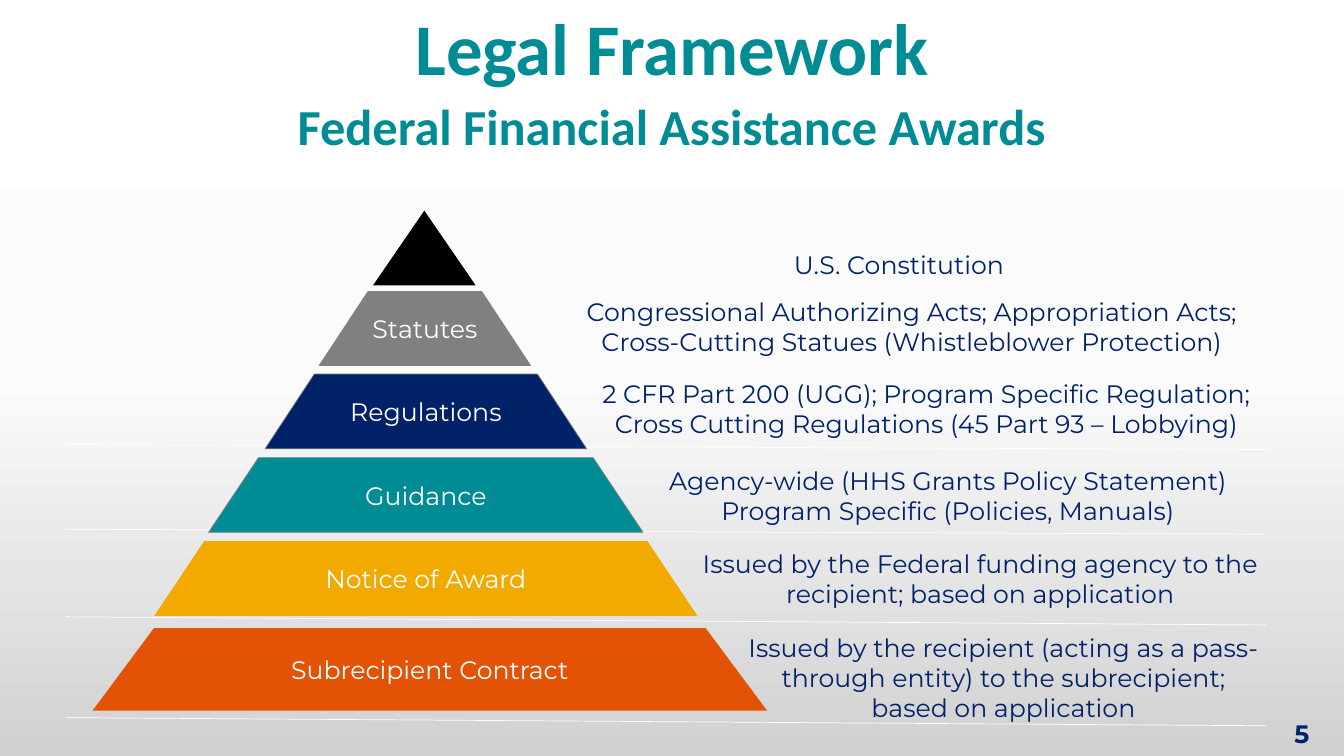
from copy import deepcopy

from lxml import etree
from pptx import Presentation
from pptx.dml.color import RGBColor
from pptx.enum.shapes import MSO_CONNECTOR, MSO_SHAPE
from pptx.enum.text import MSO_ANCHOR, MSO_AUTO_SIZE, PP_ALIGN
from pptx.oxml.ns import qn
from pptx.util import Pt

CENTER = PP_ALIGN.CENTER
TOP, MIDDLE = MSO_ANCHOR.TOP, MSO_ANCHOR.MIDDLE
FIXED, GROW = MSO_AUTO_SIZE.NONE, MSO_AUTO_SIZE.SHAPE_TO_FIT_TEXT
STRAIGHT, TRIANGLE = MSO_CONNECTOR.STRAIGHT, MSO_SHAPE.ISOSCELES_TRIANGLE

WHITE = RGBColor(0xFF, 0xFF, 0xFF)
OFF_WHITE = RGBColor(0xFB, 0xFB, 0xFB)
SILVER = RGBColor(0xD1, 0xD1, 0xD1)
GRAY = RGBColor(0x80, 0x80, 0x80)
BLACK = RGBColor(0, 0, 0)
NAVY = RGBColor(0x01, 0x21, 0x69)
TEAL = RGBColor(0x00, 0x8C, 0x95)
GOLD = RGBColor(0xF2, 0xA9, 0x00)
ORANGE = RGBColor(0xE3, 0x52, 0x05)

# label, fill, outline, centre, top, height, base width, inset of the top edge
TIERS = [
    ("Statutes", GRAY, None, 303.5, 208, 53.4, 152, 35.2),
    ("Regulations", NAVY, GRAY, 304.2, 267.2, 53.4, 229.8, 35.2),
    ("Guidance", TEAL, GRAY, 304.2, 326.9, 53.4, 310.4, 35.7),
    ("Notice of Award", GOLD, None, 304.2, 386.6, 53.4, 388, 35.7),
    ("Subrecipient Contract", ORANGE, None, 307, 448.6, 59, 481.8, 43.9),
]
# left, top, width, height, lines
SOURCES = [
    (406, 174.2, 472.3, 29, ["U.S. Constitution"]),
    (388.8, 208, 525, 51, ["Congressional Authorizing Acts; Appropriation Acts;",
                           "Cross-Cutting Statues (Whistleblower Protection)"]),
    (405.4, 266.4, 512.6, 51, ["2 CFR Part 200 (UGG); Program Specific Regulation;",
                               "Cross Cutting Regulations (45 Part 93 – Lobbying)"]),
    (440.6, 329, 473, 51, ["Agency-wide (HHS Grants Policy Statement)",
                           "Program Specific (Policies, Manuals)"]),
    (486.7, 388, 427, 51, ["Issued by the Federal funding agency to the recipient; "
                           "based on application"]),
    (503.3, 447.8, 427, 72.7, ["Issued by the recipient (acting as a pass-through entity) "
                               "to the subrecipient;", "based on application"]),
]
# height at the left end and at the right end
DIVIDERS = [(211, 211), (261.4, 262.1), (317.5, 321.1),
            (378, 381.6), (440.6, 446.4), (512.6, 518.4)]


def assign(target, values):
    for name, value in values.items():
        setattr(target, name, value)


class FrameworkSlide:
    HEADING = {"name": "Calibri", "bold": True}
    BODY = {"name": "Montserrat", "size": Pt(18), "bold": False}

    def __init__(self, slide):
        self.slide = slide

    def background(self, colors):
        """Vertical gradient with evenly spaced stops."""
        fill = self.slide.background.fill
        fill.gradient()
        fill.gradient_angle = 270
        stop_list = self.slide.element.find(".//" + qn("a:gsLst"))
        stop_list.insert(1, deepcopy(stop_list[0]))
        for i, (stop, color) in enumerate(zip(fill.gradient_stops, colors)):
            stop.position = i / (len(colors) - 1)
            stop.color.rgb = color

    def set_text(self, frame, lines, font, color, frame_format, paragraph_format=None):
        assign(frame, {"word_wrap": True, **frame_format})
        for i, line in enumerate(lines):
            paragraph = frame.paragraphs[0] if i == 0 else frame.add_paragraph()
            assign(paragraph, {"alignment": CENTER, **(paragraph_format or {})})
            run = paragraph.add_run()
            run.text = line
            assign(run.font, font)
            run.font.color.rgb = color

    def heading(self, index, text, box, size, anchor, space_before):
        holder = self.slide.placeholders[index]
        assign(holder, dict(zip(("left", "top", "width", "height"), map(Pt, box))))
        self.set_text(holder.text_frame, [text], {**self.HEADING, "size": Pt(size)}, TEAL,
                      {"auto_size": FIXED, "vertical_anchor": anchor},
                      {"line_spacing": 0.9, "space_before": Pt(space_before)})

    def divider(self, left, start, right, end):
        line = self.slide.shapes.add_connector(STRAIGHT, Pt(left), Pt(start), Pt(right), Pt(end))
        line.line.color.rgb = WHITE
        line.line.width = Pt(0.5)
        etree.SubElement(line.element.spPr, qn("a:effectLst"))

    def paint(self, shape, fill, outline=None):
        shape.shadow.inherit = False
        shape.fill.solid()
        shape.fill.fore_color.rgb = fill
        if outline is None:
            shape.line.fill.background()
        else:
            shape.line.color.rgb = outline
            shape.line.width = Pt(0.5)

    def peak(self, left, top, width, height):
        self.paint(self.slide.shapes.add_shape(
            TRIANGLE, Pt(left), Pt(top), Pt(width), Pt(height)), BLACK)

    def tier(self, label, fill, outline, center, top, height, base, inset):
        left, right, bottom = center - base / 2, center + base / 2, top + height
        builder = self.slide.shapes.build_freeform(Pt(left + inset), Pt(top))
        builder.add_line_segments([(Pt(right - inset), Pt(top)), (Pt(right), Pt(bottom)),
                                   (Pt(left), Pt(bottom))], close=True)
        trapezoid = builder.convert_to_shape()
        self.paint(trapezoid, fill, outline)
        self.set_text(trapezoid.text_frame, [label], self.BODY, WHITE,
                      {"vertical_anchor": MIDDLE})

    def note(self, left, top, width, height, lines, bold=False):
        box = self.slide.shapes.add_textbox(Pt(left), Pt(top), Pt(width), Pt(height))
        self.set_text(box.text_frame, lines, {**self.BODY, "bold": bold}, NAVY,
                      {"auto_size": GROW, "vertical_anchor": TOP})


def main():
    deck = Presentation()
    deck.slide_width, deck.slide_height = Pt(960), Pt(540)
    page = FrameworkSlide(deck.slides.add_slide(deck.slide_layouts[0]))
    page.background([WHITE, OFF_WHITE, SILVER])
    page.heading(0, "Legal Framework", (66, 2.2, 828, 69.8), 52, MIDDLE, 0)
    page.heading(1, "Federal Financial Assistance Awards", (52, 69, 856, 34.6), 36, TOP, 10)
    for start, end in DIVIDERS:
        page.divider(46.8, start, 904.3, end)
    page.peak(266.4, 150.5, 73.4, 53.4)
    for tier in TIERS:
        page.tier(*tier)
    for source in SOURCES:
        page.note(*source)
    page.note(908, 509.8, 44, 29, ["5"], bold=True)
    deck.save("out.pptx")


if __name__ == "__main__":
    main()
